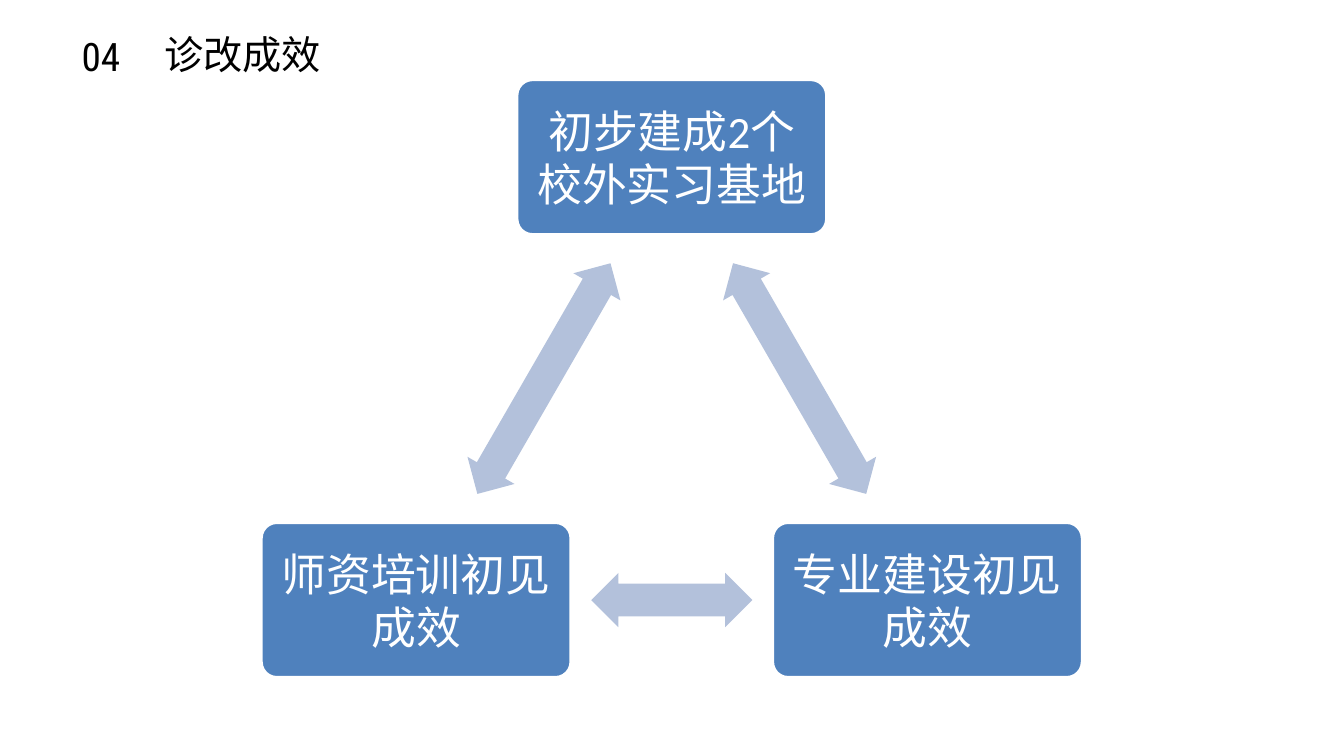
from math import cos, radians, sin

from lxml.etree import SubElement
from pptx import Presentation
from pptx.dml.color import RGBColor
from pptx.enum.shapes import MSO_SHAPE
from pptx.enum.text import MSO_ANCHOR, MSO_AUTO_SIZE, PP_ALIGN
from pptx.oxml.ns import qn
from pptx.util import Cm, Pt

BLACK = RGBColor(0x00, 0x00, 0x00)
WHITE = RGBColor(0xFF, 0xFF, 0xFF)
BLUE = RGBColor(0x4F, 0x81, 0xBD)
PALE_BLUE = RGBColor(0xB3, 0xC1, 0xDB)

# Triangle of results, in centimetres
CENTRE_X, CENTRE_Y, RADIUS = 16.93, 11.4, 7.44
BOX_WIDTH, BOX_HEIGHT = 7.8, 3.9
ARROW_HEIGHT = 1.37

# Clockwise from the top: result, length of the arrow to the next one
RESULTS = [
    ("初步建成2个校外实习基地", 6.71),
    ("专业建设初见成效", 4.06),
    ("师资培训初见成效", 6.71),
]


def add_span(para, text, font, size, color):
    """Add a run with one font for Latin and East Asian characters."""
    span = para.add_run()
    span.text = text
    span.font.name = font
    span.font.size = Pt(size)
    span.font.color.rgb = color
    SubElement(span.font._element, qn("a:ea")).set("typeface", font)


def set_margins(frame, margin):
    frame.margin_left = frame.margin_right = Cm(margin)
    frame.margin_top = frame.margin_bottom = Cm(margin)


def fill_heading(box, place, text, font, leading):
    """Place a heading box and write its single line."""
    box.left, box.top, box.width, box.height = map(Cm, place)
    frame = box.text_frame
    frame.word_wrap = True
    frame.auto_size = MSO_AUTO_SIZE.NONE
    frame.vertical_anchor = MSO_ANCHOR.TOP
    set_margins(frame, 0)
    para = frame.paragraphs[0]
    para.alignment = PP_ALIGN.LEFT
    para.line_spacing = Pt(leading)
    add_span(para, text, font, 28, BLACK)


def add_centred_shape(page, kind, centre, width, height, color):
    x, y = centre
    shape = page.shapes.add_shape(
        kind, Cm(x - width / 2), Cm(y - height / 2), Cm(width), Cm(height))
    shape.shadow.inherit = False
    shape.fill.solid()
    shape.fill.fore_color.rgb = color
    return shape


def add_result_box(page, centre, text):
    box = add_centred_shape(page, MSO_SHAPE.ROUNDED_RECTANGLE, centre,
                            BOX_WIDTH, BOX_HEIGHT, BLUE)
    box.adjustments[0] = 0.1
    box.line.color.rgb = WHITE
    box.line.width = Pt(2)
    frame = box.text_frame
    frame.word_wrap = True
    frame.vertical_anchor = MSO_ANCHOR.MIDDLE
    set_margins(frame, 0.22)
    para = frame.paragraphs[0]
    para.alignment = PP_ALIGN.CENTER
    add_span(para, text, "Calibri", 32, WHITE)


def add_double_arrow(page, centre, length, rotation):
    arrow = add_centred_shape(page, MSO_SHAPE.LEFT_RIGHT_ARROW, centre,
                              length, ARROW_HEIGHT, PALE_BLUE)
    arrow.adjustments[0] = 0.6
    arrow.adjustments[1] = 0.5
    arrow.line.fill.background()
    arrow.rotation = rotation


def corner(index):
    """Centre of a box on the equilateral triangle."""
    angle = radians(120 * index - 90)
    return CENTRE_X + RADIUS * cos(angle), CENTRE_Y + RADIUS * sin(angle)


def main():
    deck = Presentation()
    deck.slide_width, deck.slide_height = Cm(33.87), Cm(19.05)
    page = deck.slides.add_slide(deck.slide_layouts[5])

    # Section number and title
    number = page.shapes.add_textbox(0, 0, 0, 0)
    fill_heading(number, (2.06, 0.89, 2.29, 2.59), "04", "Roboto Condensed", 31.4)
    fill_heading(page.shapes.title, (4.14, 0.97, 5.44, 2.46), "诊改成效",
                 "Noto Sans CJK SC", 27.9)

    # Result boxes, each with the arrow to the next one
    for index, (text, length) in enumerate(RESULTS):
        start, end = corner(index), corner(index + 1)
        middle = (start[0] + end[0]) / 2, (start[1] + end[1]) / 2
        add_result_box(page, start, text)
        add_double_arrow(page, middle, length, 60 + 120 * index)

    deck.save("out.pptx")


if __name__ == "__main__":
    main()
